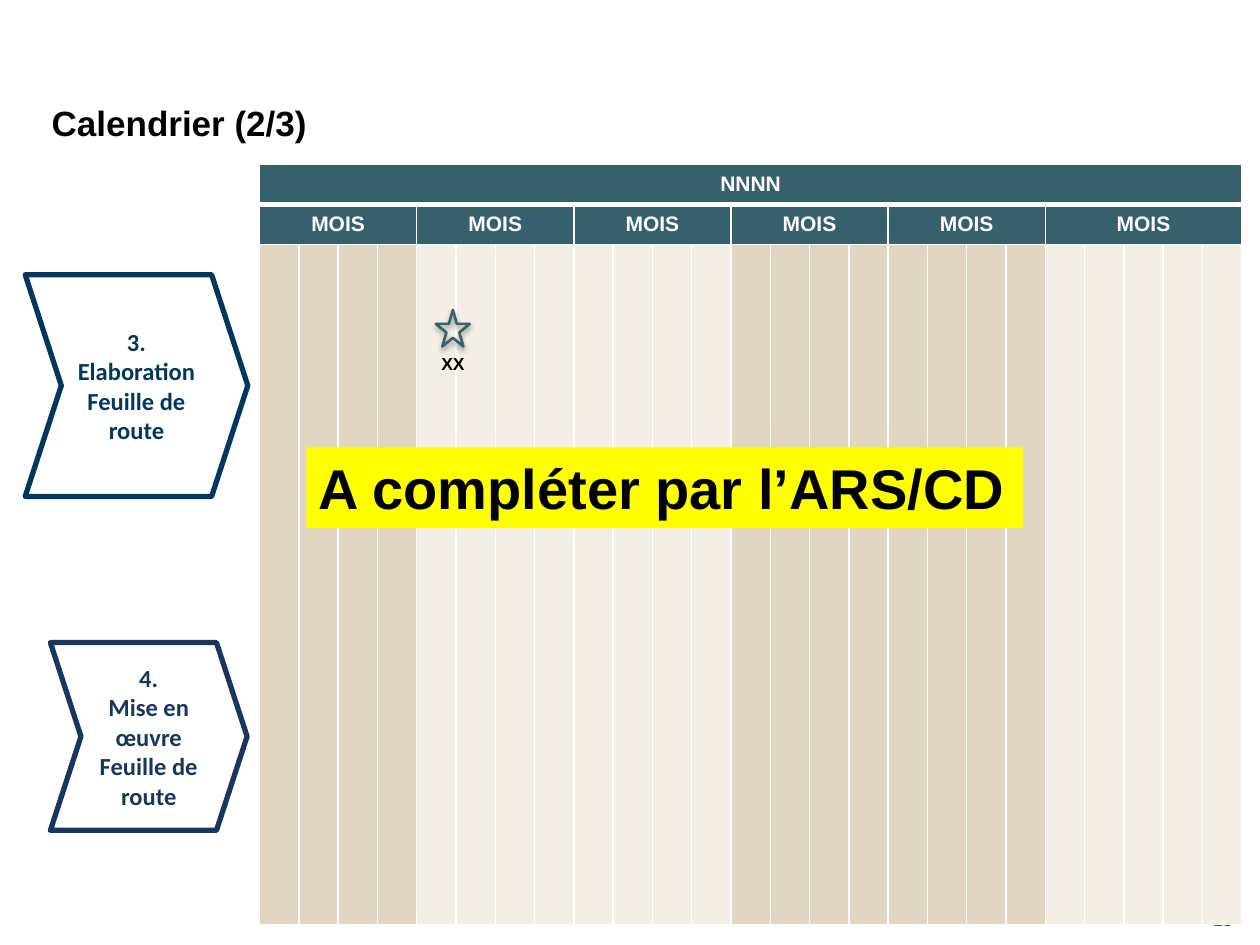
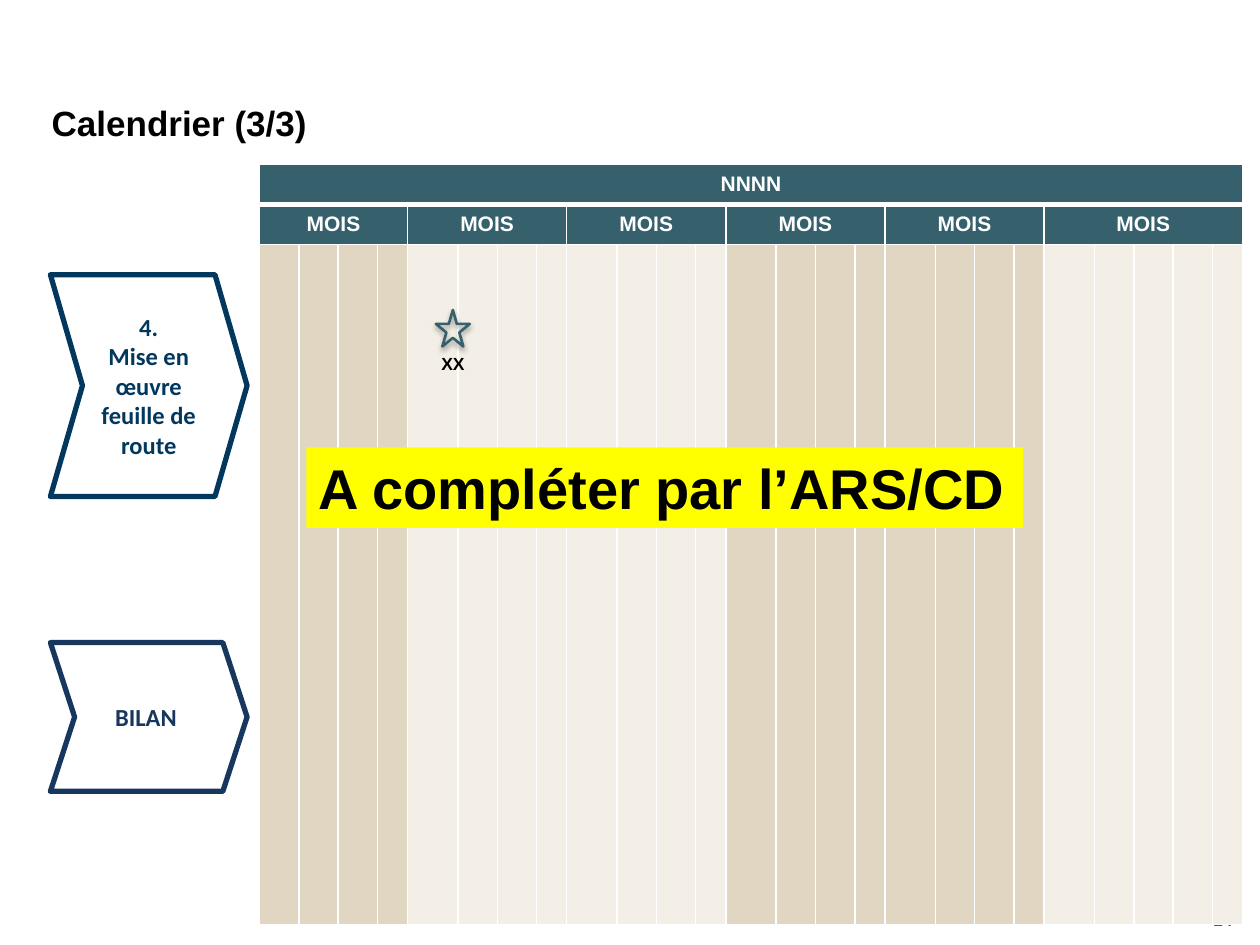
"""Build the two calendar slides, each with phase chevrons beside a monthly planning grid."""
from lxml.etree import SubElement
from pptx import Presentation
from pptx.dml.color import RGBColor
from pptx.enum.shapes import MSO_SHAPE as SHAPE
from pptx.enum.text import MSO_ANCHOR as ANCHOR, MSO_AUTO_SIZE as AUTO, PP_ALIGN as ALIGN
from pptx.oxml import parse_xml
from pptx.oxml.ns import nsdecls, qn
from pptx.util import Pt

COLORS = {"teal": "36616C", "navy": "02375E", "indigo": "17375E", "sand": "E0D6C2",
          "cream": "F3EFE7", "yellow": "FFFF00", "white": "FFFFFF", "black": "000000"}
YEAR = "NNNN"
MONTHS = [("MOIS", 4, "sand"), ("MOIS", 4, "cream"), ("MOIS", 4, "cream"),
          ("MOIS", 4, "sand"), ("MOIS", 4, "sand"), ("MOIS", 5, "cream")]
WEEK, LONG, SHORT = 22.46, 28.8, 16.5
SLIDES = [
    {"title": "Calendrier (2/3)", "number": "13", "weeks": [WEEK] * 25,
     "phases": [(["4.", "Mise en œuvre Feuille de route"], "indigo", (28.8, 367.2, 112.4, 107.3)),
                (["3.", "Elaboration", "Feuille de route"], "navy", (14.4, 157, 127.2, 126.7))]},
    {"title": "Calendrier (3/3)", "number": "14",
     "weeks": [WEEK] * 3 + [SHORT] + [LONG, WEEK, WEEK, SHORT] * 4 + [LONG] + [WEEK] * 3 + [SHORT],
     "phases": [(["BILAN "], "indigo", (28.8, 367.2, 112.4, 85)),
                (["4.", "Mise en œuvre feuille de route"], "navy", (28.8, 157, 112.4, 126.7))]},
]
ROW_HEIGHTS = [23, 23, 388.5]
GRID_LEFT, GRID_TOP = 148.3, 93.8


def rgb(name):
    return RGBColor.from_string(COLORS[name])


def write(tf, lines, size, color, font="Arial", align=None):
    tf.text = "\n".join(lines)
    for p in tf.paragraphs:
        p.alignment = align
        p.font.name, p.font.size, p.font.bold = font, Pt(size), True
        p.font.color.rgb = rgb(color)


def add_label(s, box, text, size, color="black", align=None, anchor=ANCHOR.TOP, fit=True):
    sp = s.shapes.add_textbox(*map(Pt, box))
    tf = sp.text_frame
    tf.word_wrap = not fit
    tf.auto_size = AUTO.SHAPE_TO_FIT_TEXT if fit else AUTO.NONE
    tf.vertical_anchor = anchor
    write(tf, [text], size, color, align=align)
    return sp


def add_phase(s, lines, color, box):
    sp = s.shapes.add_shape(SHAPE.CHEVRON, *map(Pt, box))
    sp.adjustments[0] = 0.163
    sp.shadow.inherit = False
    sp.fill.solid()
    sp.fill.fore_color.rgb = rgb("white")
    sp.line.color.rgb, sp.line.width = rgb(color), Pt(3)
    sp.text_frame.vertical_anchor = ANCHOR.MIDDLE
    write(sp.text_frame, lines, 14, color, "Calibri", ALIGN.CENTER)


def style_cell(cell, color, top=1, bottom=1):
    cell.fill.solid()
    cell.fill.fore_color.rgb = rgb(color)
    sides = {"lnL": 1, "lnR": 1, "lnT": top, "lnB": bottom}
    for i, (tag, width) in enumerate(sides.items()):
        cell._tc.get_or_add_tcPr().insert(i, parse_xml(
            f'<a:{tag} {nsdecls("a")} w="{Pt(width)}"><a:solidFill>'
            f'<a:srgbClr val="{COLORS["white"]}"/></a:solidFill></a:{tag}>'))


def add_heading(table, row, first, span, text):
    cell = table.cell(row, first)
    cell.merge(table.cell(row, first + span - 1))
    cell.vertical_anchor = ANCHOR.MIDDLE
    write(cell.text_frame, [text], 12, "white", align=ALIGN.CENTER)


def add_calendar(s, weeks):
    frame = s.shapes.add_table(len(ROW_HEIGHTS), len(weeks), Pt(GRID_LEFT), Pt(GRID_TOP),
                               Pt(sum(weeks)), Pt(sum(ROW_HEIGHTS)))
    table = frame.table
    for column, width in zip(table.columns, weeks):
        column.width = Pt(width)
    for row, height in zip(table.rows, ROW_HEIGHTS):
        row.height = Pt(height)
    shades = [shade for _, span, shade in MONTHS for _ in range(span)]
    for i, shade in enumerate(shades):
        style_cell(table.cell(0, i), "teal", bottom=3)
        style_cell(table.cell(1, i), "teal", top=3)
        style_cell(table.cell(2, i), shade)
    add_heading(table, 0, 0, len(weeks), YEAR)
    first = 0
    for month, span, _ in MONTHS:
        add_heading(table, 1, first, span, month)
        first += span


def add_milestone(s):
    sp = s.shapes.add_shape(SHAPE.STAR_5_POINT, Pt(249.1), Pt(177.1), Pt(19.4), Pt(20.9))
    sp.fill.background()
    sp.line.color.rgb, sp.line.width = rgb("teal"), Pt(1.5)
    sp.shadow.inherit = False
    effects = sp._element.spPr.find(qn("a:effectLst"))
    shadow = SubElement(effects, qn("a:outerShdw"), blurRad=str(Pt(3.1)), dist=str(Pt(1.8)),
                        dir="5400000", rotWithShape="0")
    color = SubElement(shadow, qn("a:srgbClr"), val=COLORS["black"])
    SubElement(color, qn("a:alpha"), val="35000")
    add_label(s, (244.8, 198, 28.1, 19.4), "XX", 10, align=ALIGN.CENTER)


def add_title(s, text):
    sp = s.shapes.title
    sp.left, sp.top, sp.width, sp.height = map(Pt, (22.3, 52.6, 687.6, 35.3))
    sp.text_frame.vertical_anchor = ANCHOR.MIDDLE
    write(sp.text_frame, [text], 20, "black", align=ALIGN.LEFT)


def build_slide(prs, content):
    s = prs.slides.add_slide(prs.slide_layouts[5])
    add_title(s, content["title"])
    add_label(s, (686.2, 511.2, 33.8, 28.8), content["number"], 10, "teal",
              anchor=ANCHOR.MIDDLE, fit=False)
    for phase in content["phases"]:
        add_phase(s, *phase)
    add_calendar(s, content["weeks"])
    add_milestone(s)
    notice = add_label(s, (175, 255.6, 409.7, 46.1), "A compléter par l’ARS/CD", 32)
    notice.fill.solid()
    notice.fill.fore_color.rgb = rgb("yellow")


def main():
    prs = Presentation()
    prs.slide_width, prs.slide_height = Pt(720), Pt(540)
    for content in SLIDES:
        build_slide(prs, content)
    prs.save("out.pptx")


if __name__ == "__main__":
    main()
